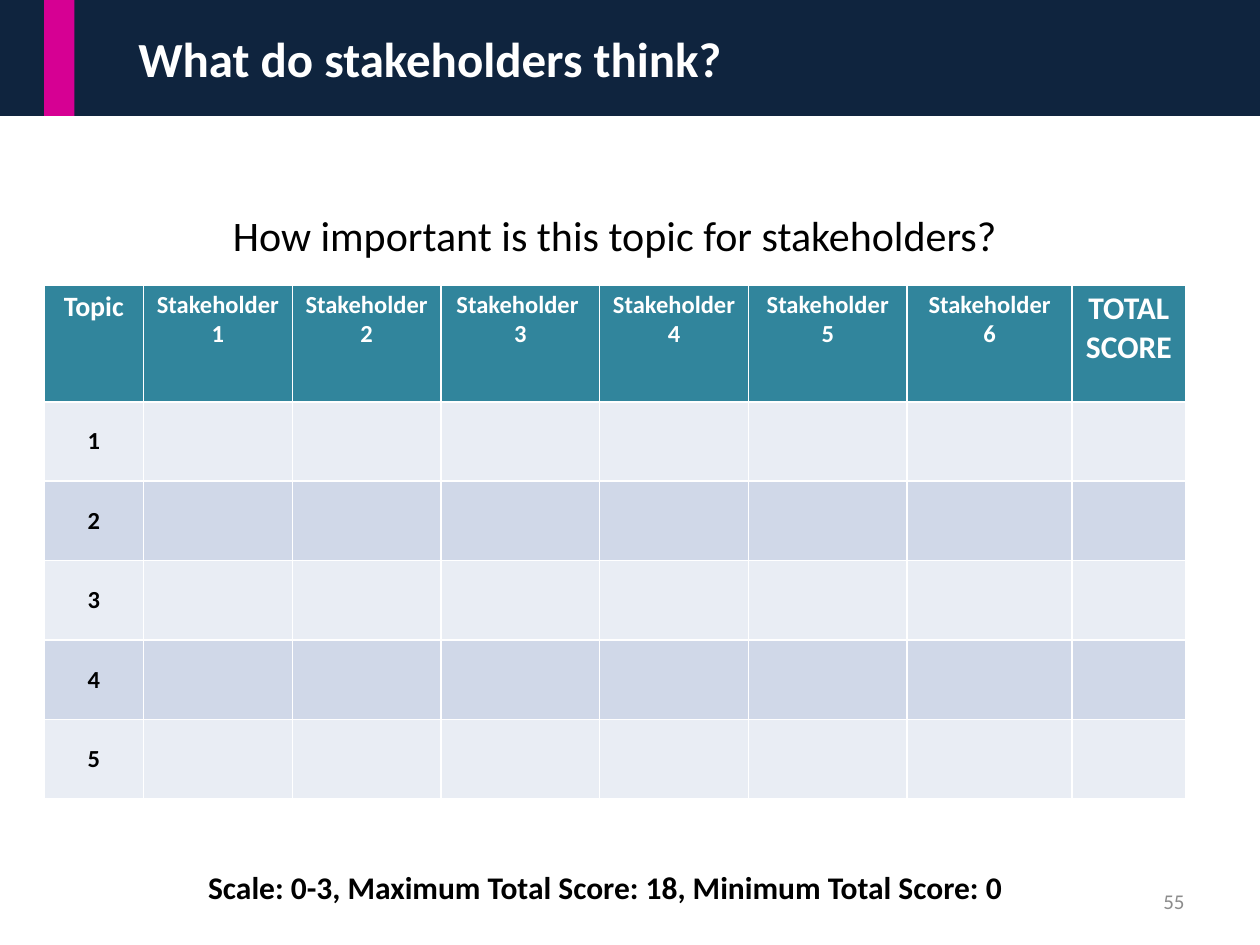
import pptx
import pptx.util
import pptx.dml.color
import pptx.enum.shapes
import pptx.enum.text
import pptx.oxml
import pptx.oxml.ns
from pptx.util import Inches

COLORS = {
    "navy": "0F243E", "magenta": "D60093", "teal": "31859C",
    "light": "E9EDF4", "band": "D0D8E8",
    "white": "FFFFFF", "black": "000000", "grey": "8C8C8C",
}
ALIGN = pptx.enum.text.PP_ALIGN
ANCHOR = pptx.enum.text.MSO_ANCHOR


def rgb(name):
    return pptx.dml.color.RGBColor.from_string(COLORS[name])


def write(frame, text, size, color, bold=False, align=ALIGN.CENTER):
    frame.text = text
    for paragraph in frame.paragraphs:
        paragraph.alignment = align
        paragraph.font.name = "Calibri"
        paragraph.font.size = pptx.util.Pt(size)
        paragraph.font.bold = bold
        paragraph.font.color.rgb = rgb(color)


deck = pptx.Presentation()
deck.slide_width = Inches(10)
deck.slide_height = Inches(7.5)
slide = deck.slides.add_slide(deck.slide_layouts[6])

column_widths = [0.79, 1.18, 1.18, 1.26, 1.18, 1.26, 1.31, 0.9]
row_heights = [0.62, 0.94] + [0.63] * 5
scores = slide.shapes.add_table(
    len(row_heights), len(column_widths),
    Inches(0.35), Inches(1.63), Inches(9.06), Inches(4.72)).table
scores.first_row = False
scores.horz_banding = False
for column, width in zip(scores.columns, column_widths):
    column.width = Inches(width)
for row, height in zip(scores.rows, row_heights):
    row.height = Inches(height)

for r, row in enumerate(scores.rows):
    for cell in row.cells:
        properties = cell._tc.get_or_add_tcPr()
        for side in "LRTB":
            thick = (r == 0 and side == "B") or (r == 1 and side == "T")
            properties.append(pptx.oxml.parse_xml(
                f'<a:ln{side} {pptx.oxml.ns.nsdecls("a")} w="{38100 if thick else 12700}">'
                f'<a:solidFill><a:srgbClr val="{COLORS["white"]}"/></a:solidFill></a:ln{side}>'))
        if r == 0:
            cell.fill.background()
        else:
            cell.fill.solid()
            cell.fill.fore_color.rgb = rgb("teal" if r == 1 else "band" if r % 2 else "light")

question = scores.cell(0, 0)
question.merge(scores.cell(0, len(column_widths) - 1))
write(question.text_frame, "How important is this topic for stakeholders?", 24, "black")

write(scores.cell(1, 0).text_frame, "Topic", 16, "white", True)
for number in range(1, 7):
    gap = "\n" if number == 3 else ""
    write(scores.cell(1, number).text_frame, f"Stakeholder {gap}{number}", 14, "white", True)
write(scores.cell(1, 7).text_frame, "TOTAL SCORE", 18, "white", True)

for topic in range(1, 6):
    topic_cell = scores.cell(topic + 1, 0)
    topic_cell.vertical_anchor = ANCHOR.MIDDLE
    write(topic_cell.text_frame, str(topic), 14, "black", True)

header = slide.shapes.add_group_shape()
bars = []
for left, width, color in [(0, 10, "navy"), (0.35, 0.24, "magenta")]:
    bar = header.shapes.add_shape(
        pptx.enum.shapes.MSO_SHAPE.RECTANGLE, Inches(left), 0, Inches(width), Inches(0.92))
    bar.shadow.inherit = False
    bar.fill.solid()
    bar.fill.fore_color.rgb = rgb(color)
    bar.line.fill.background()
    bars.append(bar)

title = bars[0].text_frame
title.vertical_anchor = ANCHOR.MIDDLE
write(title, "What do stakeholders think?", 28, "white", True, ALIGN.LEFT)
title.paragraphs[0].level = 2
title.paragraphs[0]._p.get_or_add_pPr().set("marL", str(Inches(1)))

scale = slide.shapes.add_textbox(Inches(1.22), Inches(6.84), Inches(7.17), Inches(0.4)).text_frame
scale.word_wrap = True
scale.auto_size = pptx.enum.text.MSO_AUTO_SIZE.SHAPE_TO_FIT_TEXT
write(scale, "Scale: 0-3, Maximum Total Score: 18, Minimum Total Score: 0", 18, "black", True)

page_number = slide.shapes.add_textbox(
    Inches(7.17), Inches(6.95), Inches(2.33), Inches(0.4)).text_frame
page_number.word_wrap = True
page_number.vertical_anchor = ANCHOR.MIDDLE
write(page_number, "55", 12, "grey", align=ALIGN.RIGHT)

deck.save("out.pptx")
